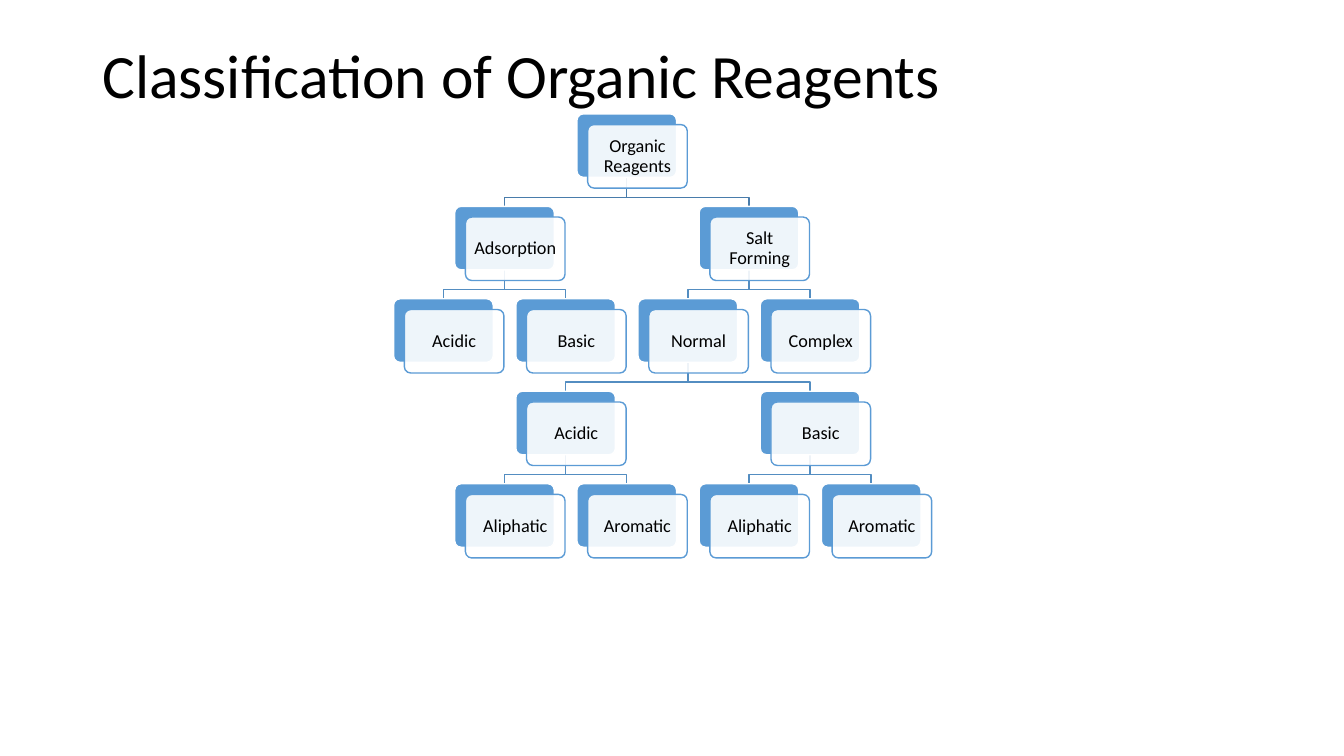
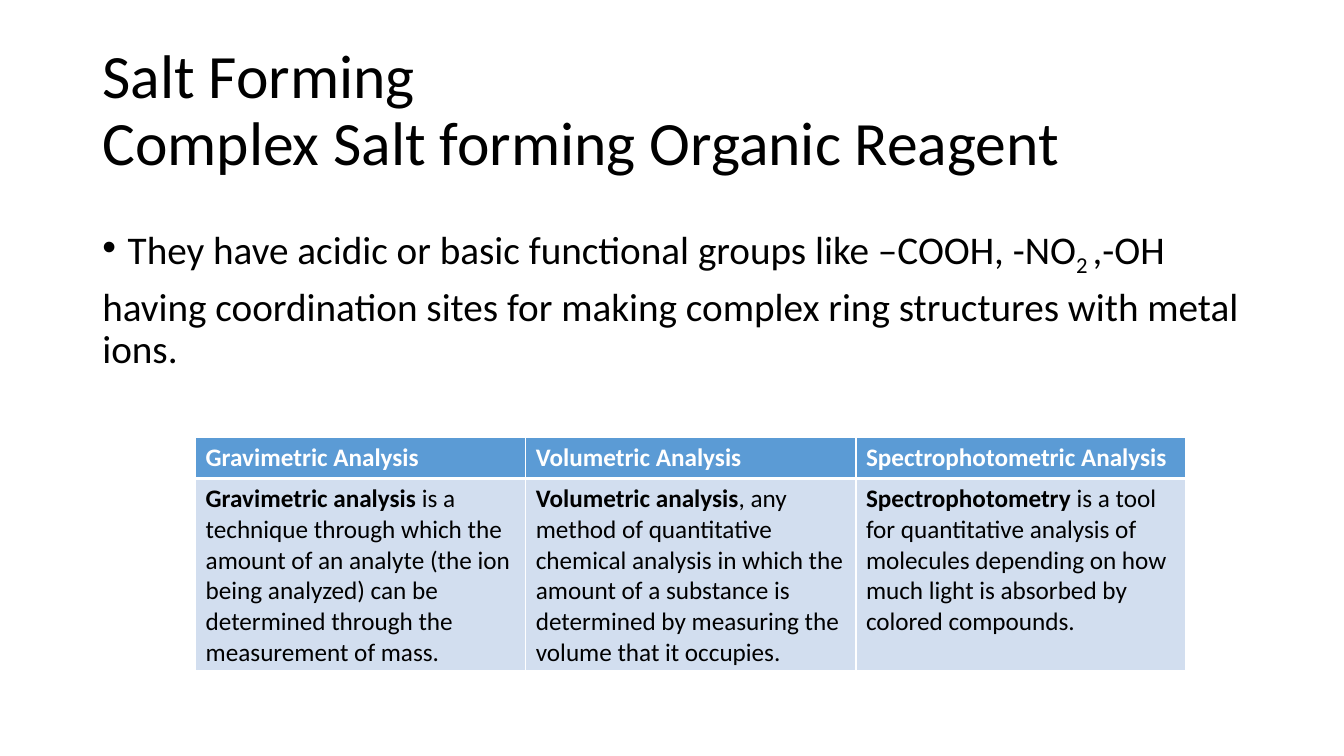
from lxml.etree import SubElement
from pptx import Presentation
from pptx.dml.color import RGBColor
from pptx.enum.shapes import MSO_SHAPE as Shape
from pptx.enum.text import MSO_ANCHOR as Anchor, PP_ALIGN as Align
from pptx.oxml.ns import qn
from pptx.util import Cm, Pt

FONT = "Calibri"
BLACK, WHITE, BLUE, PALE_BLUE = "000000", "FFFFFF", "5B9BD5", "D2DEEF"
ROOT_LINE, BRANCH_LINE = "497CAB", "538DC1"
TEXT_LEFT, TEXT_WIDTH = Cm(2.33), Cm(29.21)

TREE_TITLE = "Classification of Organic Reagents"
# Each node: label, column, children
REAGENT_TREE = ("Organic Reagents", 3, [
    ("Adsorption", 1, [
        ("Acidic", 0, []),
        ("Basic", 2, []),
    ]),
    ("Salt Forming", 5, [
        ("Normal", 4, [
            ("Acidic", 2, [("Aliphatic", 1, []), ("Aromatic", 3, [])]),
            ("Basic", 6, [("Aliphatic", 5, []), ("Aromatic", 7, [])]),
        ]),
        ("Complex", 6, []),
    ]),
])
TREE_LEFT, TREE_TOP = Cm(9.92), Cm(2.87)
COLUMN_STEP, ROW_STEP = Cm(1.54), Cm(2.33)
CARD_WIDTH, CARD_HEIGHT = Cm(2.51), Cm(1.6)
CARD_SHIFT = Cm(0.27)
ELBOW_DROP = Cm(0.5)

SALT_TITLE = "Salt Forming\vComplex Salt forming Organic Reagent"
# Each run: text, baseline shift in thousandths of a percent
SALT_POINTS = [
    [("They have acidic or basic functional groups like –COOH, -NO", 0),
     ("2 ", -25000), (",-OH", 0)],
    [("having coordination sites for making complex ring structures "
      "with metal ions.", 0)],
]
# Each column: heading, bold opening, rest of the text
METHODS = [
    ("Gravimetric Analysis", "Gravimetric analysis",
     " is a technique through which the amount of an analyte (the ion being "
     "analyzed) can be determined through the measurement of mass."),
    ("Volumetric Analysis", "Volumetric analysis",
     ", any method of quantitative chemical analysis in which the amount of a "
     "substance is determined by measuring the volume that it occupies."),
    ("Spectrophotometric Analysis", "Spectrophotometry",
     " is a tool for quantitative analysis of molecules depending on how much "
     "light is absorbed by colored compounds."),
]
METHOD_WIDTH, ROW_HEIGHTS = Cm(8.32), (Cm(1.04), Cm(4.83))


def color(value):
    return RGBColor.from_string(value)


def style(paragraph, size, font_color=BLACK, line_spacing=None):
    paragraph.font.name = FONT
    paragraph.font.size = Pt(size)
    paragraph.font.color.rgb = color(font_color)
    paragraph.line_spacing = line_spacing


def add_text_frame(slide, top, height):
    frame = slide.shapes.add_textbox(TEXT_LEFT, top, TEXT_WIDTH, height).text_frame
    frame.word_wrap = True
    return frame


def add_title(slide, text):
    frame = add_text_frame(slide, Cm(1.02), Cm(3.68))
    frame.text = text
    style(frame.paragraphs[0], 44, line_spacing=0.9)


def card_position(column, row):
    return TREE_LEFT + column * COLUMN_STEP, TREE_TOP + row * ROW_STEP


def add_elbow(slide, parent, child, line_color):
    """Draw the line from the bottom of one card to the top of a card below."""
    start_x, start_y = parent[0] + CARD_WIDTH // 2, parent[1] + CARD_HEIGHT
    end_x, end_y = child[0] + CARD_WIDTH // 2, child[1]
    bend_y = start_y + ELBOW_DROP
    builder = slide.shapes.build_freeform(start_x, start_y)
    builder.add_line_segments(
        [(start_x, bend_y), (end_x, bend_y), (end_x, end_y)], close=False)
    elbow = builder.convert_to_shape()
    elbow.shadow.inherit = False
    elbow.fill.background()
    elbow.line.color.rgb = color(line_color)
    elbow.line.width = Pt(1)


def add_branches(slide, node, row=0):
    _, column, children = node
    for child in children:
        add_branches(slide, child, row + 1)
        add_elbow(slide, card_position(column, row),
                  card_position(child[1], row + 1),
                  BRANCH_LINE if row else ROOT_LINE)


def add_panel(slide, left, top, fill_color, line_color):
    panel = slide.shapes.add_shape(
        Shape.ROUNDED_RECTANGLE, left, top, CARD_WIDTH, CARD_HEIGHT)
    panel.adjustments[0] = 0.1
    panel.shadow.inherit = False
    panel.fill.solid()
    panel.fill.fore_color.rgb = color(fill_color)
    panel.line.color.rgb = color(line_color)
    panel.line.width = Pt(1)
    return panel


def add_cards(slide, node, row=0):
    label, column, children = node
    left, top = card_position(column, row)
    add_panel(slide, left, top, BLUE, WHITE)
    front = add_panel(slide, left + CARD_SHIFT, top + CARD_SHIFT, WHITE, BLUE)
    fill_xml = front.fill._xPr.find(qn("a:solidFill"))
    SubElement(fill_xml[0], qn("a:alpha"), val="90000")
    frame = front.text_frame
    frame.word_wrap = True
    frame.vertical_anchor = Anchor.MIDDLE
    frame.margin_left = frame.margin_right = Cm(0.13)
    frame.margin_top = frame.margin_bottom = Cm(0.13)
    frame.text = label
    paragraph = frame.paragraphs[0]
    paragraph.alignment = Align.CENTER
    style(paragraph, 13, line_spacing=0.9)
    for child in children:
        add_cards(slide, child, row + 1)


def add_bullet(paragraph):
    properties = paragraph._p.get_or_add_pPr()
    properties.set("marL", str(Cm(0.64)))
    properties.set("indent", str(-Cm(0.64)))
    SubElement(properties, qn("a:buFont"), typeface="Arial")
    SubElement(properties, qn("a:buChar"), char="•")


def add_points(slide, points):
    frame = add_text_frame(slide, Cm(5.56), Cm(4.5))
    for index, runs in enumerate(points):
        if index:
            paragraph = frame.add_paragraph()
            paragraph.space_before = Pt(10)
        else:
            paragraph = frame.paragraphs[0]
            add_bullet(paragraph)
        style(paragraph, 28, line_spacing=0.9)
        for text, baseline in runs:
            run = paragraph.add_run()
            run.text = text
            if baseline:
                run.font._element.set("baseline", str(baseline))


def format_cell(cell, fill_color, top_width, bottom_width):
    properties = cell._tc.get_or_add_tcPr()
    for side, width in (("L", 1), ("R", 1), ("T", top_width), ("B", bottom_width)):
        line = SubElement(properties, qn(f"a:ln{side}"), w=str(Pt(width)))
        SubElement(SubElement(line, qn("a:solidFill")), qn("a:srgbClr"), val=WHITE)
    cell.fill.solid()
    cell.fill.fore_color.rgb = color(fill_color)


def add_method_table(slide, methods):
    table = slide.shapes.add_table(
        2, len(methods), Cm(4.93), Cm(11.02),
        METHOD_WIDTH * len(methods), sum(ROW_HEIGHTS)).table
    table.horz_banding = False
    for row, height in zip(table.rows, ROW_HEIGHTS):
        row.height = height
    for index, (heading, opening, rest) in enumerate(methods):
        table.columns[index].width = METHOD_WIDTH
        head, body = table.cell(0, index), table.cell(1, index)
        format_cell(head, BLUE, 1, 3)
        format_cell(body, PALE_BLUE, 3, 1)
        head.text = heading
        head_paragraph = head.text_frame.paragraphs[0]
        style(head_paragraph, 18, WHITE)
        head_paragraph.font.bold = True
        body_paragraph = body.text_frame.paragraphs[0]
        style(body_paragraph, 18)
        for text, bold in ((opening, True), (rest, False)):
            run = body_paragraph.add_run()
            run.text = text
            run.font.bold = bold


def main():
    presentation = Presentation()
    presentation.slide_width, presentation.slide_height = Cm(33.87), Cm(19.05)
    blank = presentation.slide_layouts[6]

    tree_slide = presentation.slides.add_slide(blank)
    add_title(tree_slide, TREE_TITLE)
    add_branches(tree_slide, REAGENT_TREE)
    add_cards(tree_slide, REAGENT_TREE)

    salt_slide = presentation.slides.add_slide(blank)
    add_title(salt_slide, SALT_TITLE)
    add_points(salt_slide, SALT_POINTS)
    add_method_table(salt_slide, METHODS)

    presentation.save("out.pptx")


if __name__ == "__main__":
    main()
